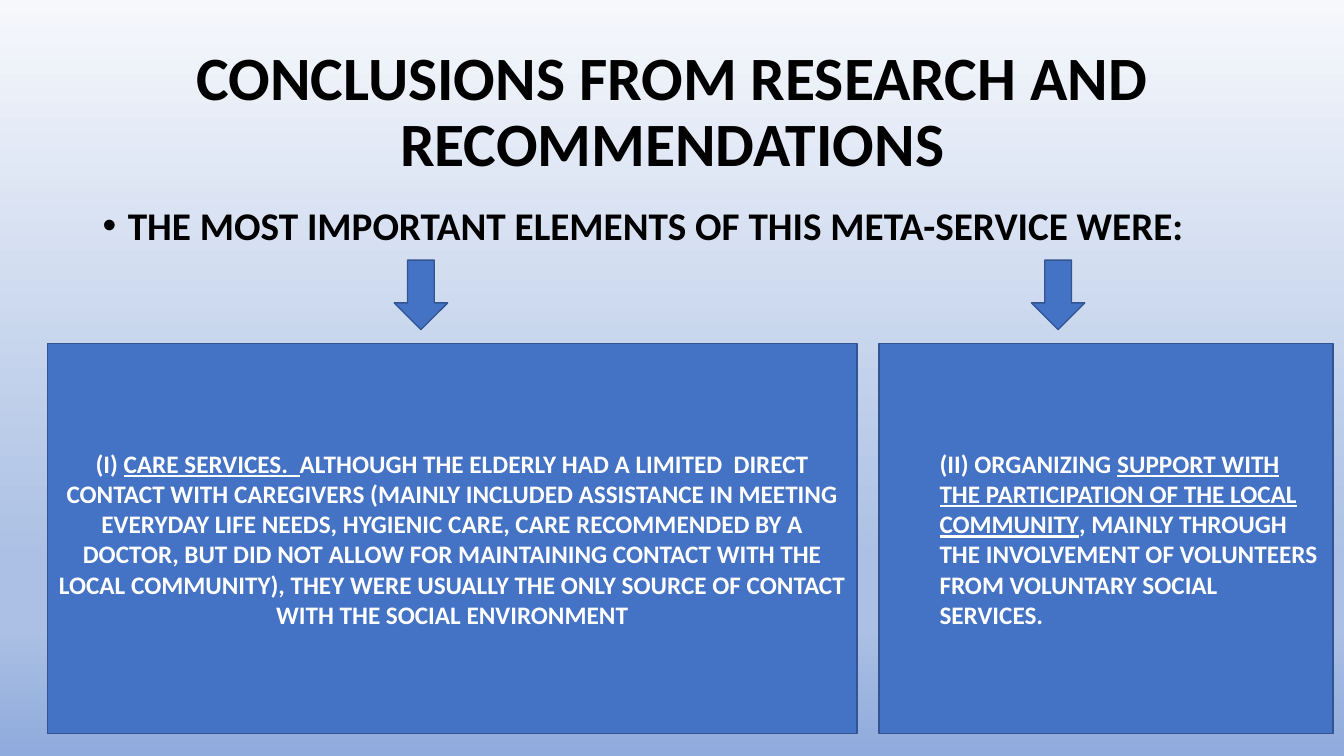
from lxml import etree
from pptx import Presentation, util as u
from pptx.dml.color import RGBColor
from pptx.enum import shapes, text
from pptx.oxml.ns import qn

WIDTH, HEIGHT = u.Inches(13.33), u.Inches(7.5)
BLACK = RGBColor(0, 0, 0)
WHITE = RGBColor(255, 255, 255)
BLUE = RGBColor(0x44, 0x72, 0xC4)
OUTLINE = RGBColor(0x32, 0x54, 0x91)
BACKDROP = (
    (0, RGBColor(0xF6, 0xF8, 0xFC)),
    (74, RGBColor(0xAB, 0xC0, 0xE4)),
    (83, RGBColor(0xAB, 0xC0, 0xE4)),
    (100, RGBColor(0x8F, 0xAA, 0xDC)),
)

LEFT, CENTER = text.PP_ALIGN.LEFT, text.PP_ALIGN.CENTER
MIDDLE, TOP = text.MSO_ANCHOR.MIDDLE, text.MSO_ANCHOR.TOP

CONTENT_LEFT, CONTENT_WIDTH = 0.92, 11.5
ARROW_TOP, ARROW_WIDTH, ARROW_HEIGHT = 2.58, 0.53, 0.69
BOX_TOP, BOX_HEIGHT = 3.41, 3.87

TITLE = [("CONCLUSIONS FROM RESEARCH AND RECOMMENDATIONS", False)]
LEAD = [("THE MOST IMPORTANT ELEMENTS OF THIS META-SERVICE WERE:", False)]
CARE = [
    ("(I) ", False),
    ("CARE SERVICES.  ", True),
    ("ALTHOUGH THE ELDERLY HAD A LIMITED  DIRECT CONTACT WITH CAREGIVERS "
     "(MAINLY INCLUDED ASSISTANCE IN MEETING EVERYDAY LIFE NEEDS, HYGIENIC CARE, "
     "CARE RECOMMENDED BY A DOCTOR, BUT DID NOT ALLOW FOR MAINTAINING CONTACT WITH "
     "THE LOCAL COMMUNITY), THEY WERE USUALLY THE ONLY SOURCE OF CONTACT WITH THE "
     "SOCIAL ENVIRONMENT", False),
]
SUPPORT = [
    ("(II) ORGANIZING ", False),
    ("SUPPORT WITH THE PARTICIPATION OF THE LOCAL COMMUNITY", True),
    (", MAINLY THROUGH THE INVOLVEMENT OF VOLUNTEERS FROM VOLUNTARY SOCIAL SERVICES.", False),
]
COLUMNS = (
    (0.47, 8.03, 3.91, CARE, CENTER, 0),
    (8.72, 4.5, 10.23, SUPPORT, LEFT, 0.5),
)


def apply(target, values):
    for name, value in values.items():
        setattr(target, name, value)


def paint_background(slide):
    fill = slide.background.fill
    fill.gradient()
    fill.gradient_angle = 270
    stops = next(slide.element.iter(qn("a:gsLst")))
    for stop in list(stops):
        stops.remove(stop)
    for position, color in BACKDROP:
        stop = etree.SubElement(stops, qn("a:gs"), pos=str(position * 1000))
        etree.SubElement(stop, qn("a:srgbClr"), val=str(color))


def write(shape, runs, size, color, anchor, paragraph_format):
    frame = shape.text_frame
    apply(frame, {"word_wrap": True, "vertical_anchor": anchor})
    paragraph = frame.paragraphs[0]
    apply(paragraph, paragraph_format)
    for words, underlined in runs:
        run = paragraph.add_run()
        run.text = words
        apply(run.font, {"name": "Calibri", "size": u.Pt(size), "bold": True,
                         "underline": underlined})
        run.font.color.rgb = color
    return paragraph


def indent(paragraph, margin, first_line=0):
    properties = paragraph._p.get_or_add_pPr()
    properties.set("marL", str(u.Inches(margin)))
    properties.set("indent", str(u.Inches(first_line)))
    return properties


def add_bullet(paragraph):
    properties = indent(paragraph, 0.25, -0.25)
    etree.SubElement(properties, qn("a:buFont"), typeface="Arial")
    etree.SubElement(properties, qn("a:buChar"), char="•")


def add_text(slide, top, height, runs, size, anchor, paragraph_format):
    box = slide.shapes.add_textbox(*map(u.Inches, (CONTENT_LEFT, top, CONTENT_WIDTH, height)))
    return write(box, runs, size, BLACK, anchor, {"line_spacing": 0.9, **paragraph_format})


def add_block(slide, kind, left, top, width, height):
    shape = slide.shapes.add_shape(kind, *map(u.Inches, (left, top, width, height)))
    shape.shadow.inherit = False
    shape.fill.solid()
    shape.fill.fore_color.rgb = BLUE
    shape.line.color.rgb = OUTLINE
    shape.line.width = u.Pt(1)
    return shape


def main():
    presentation = Presentation()
    apply(presentation, {"slide_width": WIDTH, "slide_height": HEIGHT})
    slide = presentation.slides.add_slide(presentation.slide_layouts[6])
    paint_background(slide)
    add_text(slide, 0.4, 1.45, TITLE, 44, MIDDLE, {"alignment": CENTER})
    lead = add_text(slide, 2, 0.56, LEAD, 28, TOP,
                    {"alignment": LEFT, "space_before": u.Pt(10)})
    add_bullet(lead)
    for left, width, arrow_left, runs, alignment, margin in COLUMNS:
        box = add_block(slide, shapes.MSO_SHAPE.RECTANGLE, left, BOX_TOP, width, BOX_HEIGHT)
        paragraph = write(box, runs, 18, WHITE, MIDDLE, {"alignment": alignment})
        indent(paragraph, margin)
        add_block(slide, shapes.MSO_SHAPE.DOWN_ARROW, arrow_left, ARROW_TOP,
                  ARROW_WIDTH, ARROW_HEIGHT)
    presentation.save("out.pptx")


if __name__ == "__main__":
    main()
